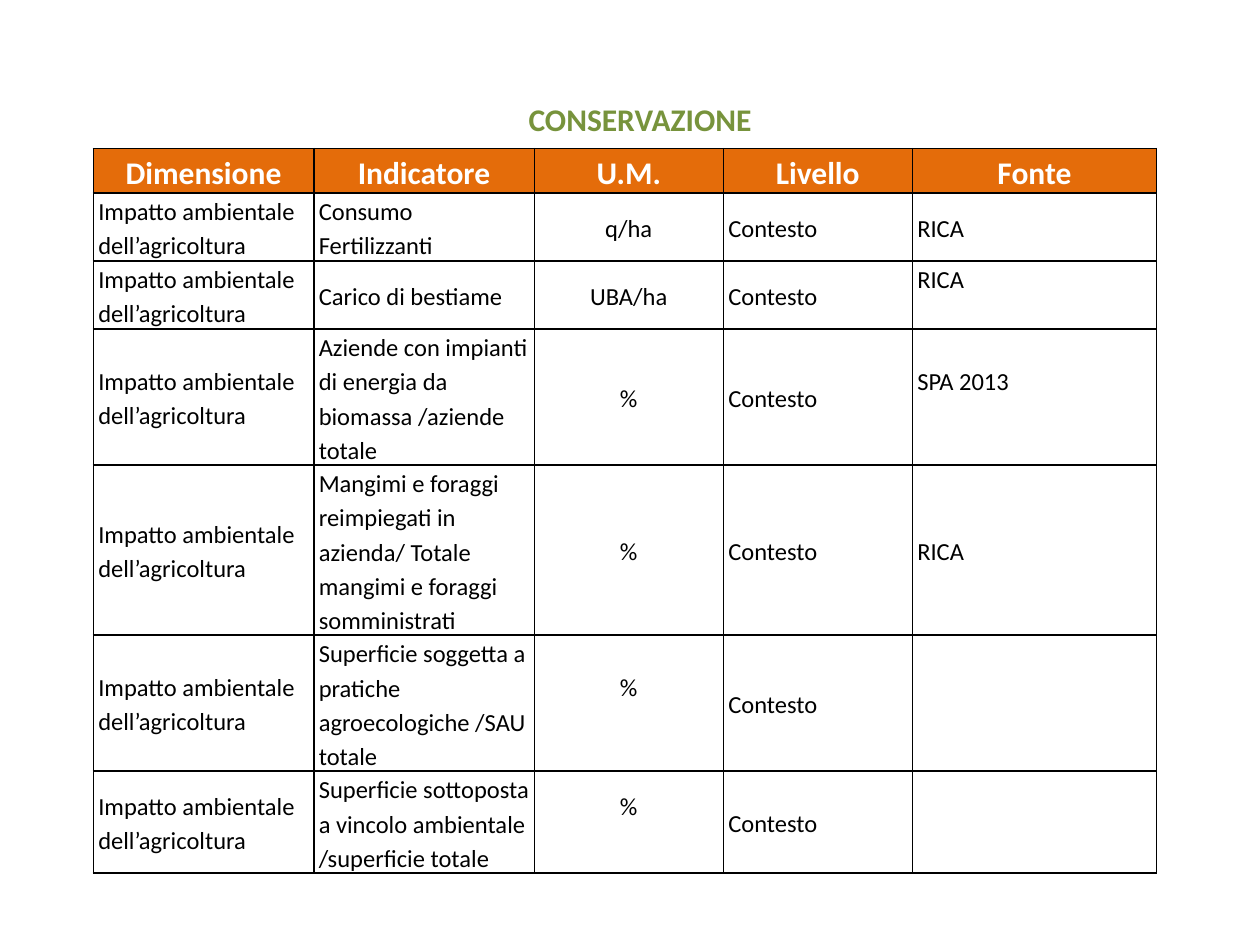
from pptx import Presentation
from pptx.dml.color import RGBColor
from pptx.enum.text import MSO_ANCHOR, MSO_AUTO_SIZE, PP_ALIGN
from pptx.oxml.ns import qn
from pptx.util import Inches, Pt
from lxml.etree import SubElement

ORANGE = RGBColor(0xE4, 0x6C, 0x0A)
GREEN = RGBColor(0x77, 0x93, 0x3C)
WHITE = RGBColor(0xFF, 0xFF, 0xFF)
BLACK = RGBColor(0, 0, 0)

# Content
TITLE = "CONSERVAZIONE"
HEAD = ["Dimensione", "Indicatore", "U.M.", "Livello", "Fonte"]
AREA = "Impatto ambientale dell’agricoltura"
LEVEL = "Contesto"
# indicator, unit, source, lines of text in the row
ITEMS = [
    ("Consumo Fertilizzanti", "q/ha", "RICA", 2),
    ("Carico di bestiame", "UBA/ha", "RICA", 2),
    ("Aziende con impianti di energia da biomassa /aziende totale",
     "%", "SPA 2013", 4),
    ("Mangimi e foraggi reimpiegati in azienda/ Totale mangimi e foraggi "
     "somministrati", "%", "RICA", 5),
    ("Superficie soggetta a pratiche agroecologiche /SAU totale", "%", "", 4),
    ("Superficie sottoposta a vincolo ambientale /superficie totale",
     "%", "", 3),
]
RAISED = {(2, 4), (3, 4), (5, 2), (6, 2)}  # cells set half a line higher
WIDTHS = [1.75, 1.75, 1.5, 1.5, 1.94]
UNIT_COL = 2
LINE = 0.27
HEAD_TALL = 0.35


def write(frame, text, size=14, color=BLACK, bold=False,
          align=PP_ALIGN.LEFT, space=1.15):
    para = frame.paragraphs[0]
    para.alignment = align
    para.line_spacing = space
    run = para.add_run()
    run.text = text
    font = run.font
    font.name = "Calibri"
    font.size = Pt(size)
    font.bold = bold
    font.color.rgb = color


def border(cell):
    props = cell._tc.get_or_add_tcPr()
    for n, side in enumerate(("lnL", "lnR", "lnT", "lnB")):
        line = props.makeelement(qn(f"a:{side}"), {"w": str(Pt(1))})
        fill = SubElement(line, qn("a:solidFill"))
        SubElement(fill, qn("a:srgbClr"), val=str(BLACK))
        props.insert(n, line)


deck = Presentation()
deck.slide_width, deck.slide_height = Inches(10), Inches(7.5)
slide = deck.slides.add_slide(deck.slide_layouts[5])

# Title
title = slide.shapes.title
title.left, title.top = Inches(2.56), Inches(0.74)
title.width, title.height = Inches(5.04), Inches(0.4)
title.text_frame.vertical_anchor = MSO_ANCHOR.TOP
title.text_frame.auto_size = MSO_AUTO_SIZE.SHAPE_TO_FIT_TEXT
write(title.text_frame, TITLE, size=18, color=GREEN, bold=True,
      align=PP_ALIGN.CENTER, space=1.0)

# Table grid
rows = [HEAD] + [(AREA, name, unit, LEVEL, source)
                 for name, unit, source, _ in ITEMS]
talls = [HEAD_TALL] + [item[-1] * LINE for item in ITEMS]
table = slide.shapes.add_table(
    len(rows), len(HEAD), Inches(0.74), Inches(1.18),
    Inches(sum(WIDTHS)), Inches(sum(talls))).table
table.horz_banding = False
for col, wide in zip(table.columns, WIDTHS):
    col.width = Inches(wide)

# Table cells
for r, (row, tall) in enumerate(zip(rows, talls)):
    table.rows[r].height = Inches(tall)
    for c, text in enumerate(row):
        cell = table.cell(r, c)
        top = r == 0
        cell.margin_left = cell.margin_right = Inches(0.05 if top else 0.04)
        cell.margin_top = 0
        cell.margin_bottom = Inches(LINE if (r, c) in RAISED else 0)
        cell.vertical_anchor = MSO_ANCHOR.MIDDLE
        if top:
            cell.fill.solid()
            cell.fill.fore_color.rgb = ORANGE
            write(cell.text_frame, text, size=18, color=WHITE, bold=True,
                  align=PP_ALIGN.CENTER)
        else:
            cell.fill.background()
            if text:
                write(cell.text_frame, text, align=PP_ALIGN.CENTER
                      if c == UNIT_COL else PP_ALIGN.LEFT)
        border(cell)

deck.save("out.pptx")
